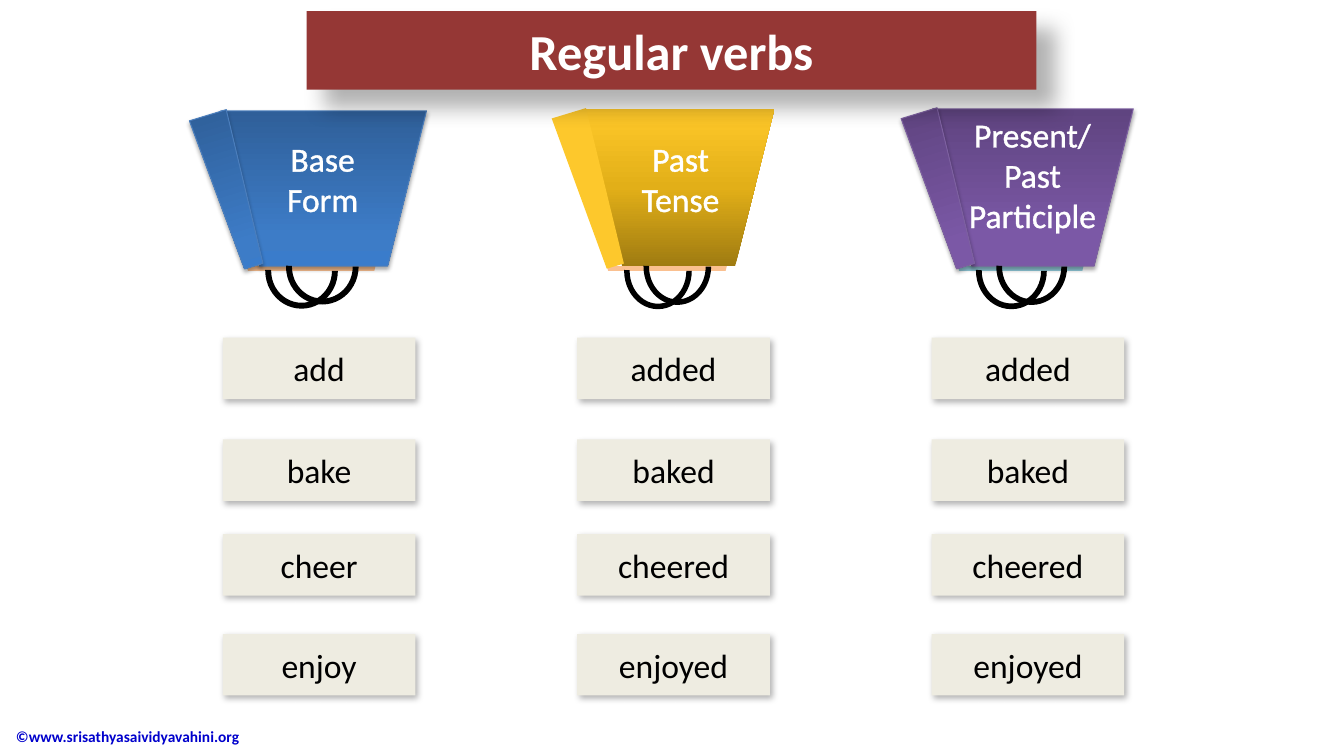
"""Build a slide that sorts regular verbs into three bags of forms."""
from lxml.etree import SubElement
from pptx import Presentation
from pptx.dml.color import RGBColor
from pptx.enum.shapes import MSO_SHAPE as Geo
from pptx.enum.text import MSO_ANCHOR as Anchor, PP_ALIGN as Align
from pptx.oxml.ns import qn
from pptx.util import Inches, Pt

WHITE = RGBColor(0xFF, 0xFF, 0xFF)
BLACK = RGBColor(0, 0, 0)
MAROON = RGBColor(0x95, 0x37, 0x35)
CREAM = RGBColor(0xEE, 0xEC, 0xE1)
LINK_BLUE = RGBColor(0, 0, 0xCC)
PEACH = RGBColor(0xFA, 0xC0, 0x90)
AQUA = RGBColor(0x93, 0xCD, 0xDD)
BLUE_EDGE = RGBColor(0x4B, 0x7E, 0xBC)
PURPLE_EDGE = RGBColor(0x7D, 0x60, 0xA0)
GOLD_SIDE = RGBColor(0xFD, 0xC8, 0x2C)
BLUES = [(0, RGBColor(0x2F, 0x5F, 0x99)), (80, RGBColor(0x3D, 0x7C, 0xC7)),
         (100, RGBColor(0x3A, 0x7C, 0xCB))]
GOLDS = [(0, RGBColor(0x9F, 0x7B, 0x11)), (50, RGBColor(0xE2, 0xAF, 0x18)),
         (100, RGBColor(0xFF, 0xC9, 0x2A))]
PURPLES = [(0, RGBColor(0x5F, 0x44, 0x80)), (80, RGBColor(0x7B, 0x58, 0xA6)),
           (100, RGBColor(0x7C, 0x57, 0xA8))]

TITLE = "Regular verbs"
CREDIT = "©www.srisathyasaividyavahini.org"
VERBS = [("add", "added", "added"), ("bake", "baked", "baked"),
         ("cheer", "cheered", "cheered"), ("enjoy", "enjoyed", "enjoyed")]
BAGS = [
    dict(label=["Base Form"], label_box=(2.53, 1.32, 1.34, 0.91), body=(2.19, 1.1, 2.04, 1.54),
         front=BLUES, side=BLUES, angle=90, edge=BLUE_EDGE, base=PEACH),
    dict(label=["Past Tense"], label_box=(6.08, 1.32, 1.34, 0.91), body=(5.78, 1.08, 1.9, 1.56),
         front=GOLDS, side=GOLD_SIDE, angle=270, edge=None, base=PEACH),
    dict(label=["Present/", "Past Participle"], label_box=(9.39, 1.08, 1.7, 1.31),
         body=(9.25, 1.08, 1.99, 1.56),
         front=PURPLES, side=PURPLES, angle=90, edge=PURPLE_EDGE, base=AQUA),
]
CARD_LEFT, CARD_STEP, CARD_WIDTH, CARD_HEIGHT = 2.21, 3.515, 1.91, 0.61
ROW_TOPS = [3.35, 4.36, 5.3, 6.29]

BAG_SHADOW = (35, 3.1, 1.8, 90)
CARD_SHADOW = (30, 4.5, 2.6, 53)
TITLE_SHADOW = (30, 15, 18, 45)


def write(shape, paragraphs, size=24, color=BLACK, bold=False, align=Align.CENTER,
          anchor=Anchor.MIDDLE, outline=False):
    """Fill a shape with formatted paragraphs."""
    frame = shape.text_frame
    frame.word_wrap = True
    frame.vertical_anchor = anchor
    for index, words in enumerate(paragraphs):
        paragraph = frame.add_paragraph() if index else frame.paragraphs[0]
        paragraph.alignment = align
        run = paragraph.add_run()
        run.text = words
        if outline:
            edge = SubElement(run._r.get_or_add_rPr(), qn("a:ln"), w=str(Pt(0.8)))
            solid = SubElement(edge, qn("a:solidFill"))
            SubElement(solid, qn("a:srgbClr"), val=str(color))
        font = run.font
        font.name, font.size, font.bold = "Calibri", Pt(size), bold
        font.color.rgb = color


def paint(shape, fill, angle=90, edge=None, shadow=None):
    """Apply a plain or graded fill, an edge and a shadow."""
    if isinstance(fill, RGBColor):
        shape.fill.solid()
        shape.fill.fore_color.rgb = fill
    else:
        shape.fill.gradient()
        shape.fill.gradient_angle = angle
        stops = next(shape._element.spPr.iter(qn("a:gsLst")))
        stops.clear()
        for position, color in fill:
            stop = SubElement(stops, qn("a:gs"), pos=str(position * 1000))
            SubElement(stop, qn("a:srgbClr"), val=str(color))
    if edge is None:
        shape.line.fill.background()
    else:
        shape.line.color.rgb = edge
        shape.line.width = Pt(0.75)
    shape.shadow.inherit = False
    if shadow:
        alpha, blur, distance, direction = shadow
        effects = shape._element.spPr.find(qn("a:effectLst"))
        outer = SubElement(effects, qn("a:outerShdw"), blurRad=str(Pt(blur)),
                           dist=str(Pt(distance)), dir=str(direction * 60000),
                           algn="ctr", rotWithShape="0")
        tint = SubElement(outer, qn("a:srgbClr"), val=str(BLACK))
        SubElement(tint, qn("a:alpha"), val=str(alpha * 1000))


def add_part(slide, geometry, box, fill, rotation=0, **style):
    """Add one painted preset shape."""
    part = slide.shapes.add_shape(geometry, *map(Inches, box))
    part.rotation = rotation
    paint(part, fill, **style)
    return part


def add_bag(slide, bag):
    """Draw an upturned bag sized by its body, with its label."""
    left, top, width, height = bag["body"]
    edge, angle = bag["edge"], bag["angle"]
    shadow = BAG_SHADOW if edge else None

    def share(x, y, w, h):
        return left + x * width, top + y * height, w * width, h * height

    add_part(slide, Geo.TRAPEZOID, share(0.126, 1, 0.626, 0.03), bag["base"], 180)
    add_part(slide, Geo.TRAPEZOID, bag["body"], bag["front"], 180,
             angle=angle, edge=edge, shadow=shadow)
    add_part(slide, Geo.TRAPEZOID, share(-0.045, 0.006, 0.187, 1.016), bag["side"], 163.1,
             angle=angle, edge=edge, shadow=shadow)
    for x, y in [(0.317, 0.76), (0.216, 0.787)]:
        handle = add_part(slide, Geo.BLOCK_ARC, share(x, y, 0.353, 0.487), BLACK, 180)
        for index, value in enumerate((108, 0.925, 0.081)):
            handle.adjustments[index] = value
    label = slide.shapes.add_textbox(*map(Inches, bag["label_box"]))
    write(label, bag["label"], color=WHITE, anchor=Anchor.TOP, outline=True)


def add_title(slide):
    """Turn the title placeholder into a rounded banner in front."""
    title = slide.shapes.title
    title.left, title.top, title.width, title.height = map(Inches, (3.04, 0.11, 7.24, 0.78))
    geometry = SubElement(title._element.spPr, qn("a:prstGeom"), prst="roundRect")
    SubElement(geometry, qn("a:avLst"))
    paint(title, MAROON, shadow=TITLE_SHADOW)
    write(title, [TITLE], size=36, color=WHITE, bold=True)
    slide.shapes._spTree.append(title._element)


def main():
    """Assemble and save the slide."""
    deck = Presentation()
    deck.slide_width, deck.slide_height = Inches(13.33), Inches(7.5)
    slide = deck.slides.add_slide(deck.slide_layouts[5])
    credit = slide.shapes.add_textbox(*map(Inches, (0.06, 7.1, 3.53, 0.41)))
    write(credit, [CREDIT], size=11, color=LINK_BLUE, bold=True, align=Align.LEFT)
    for bag in BAGS:
        add_bag(slide, bag)
    for top, forms in zip(ROW_TOPS, VERBS):
        for column, form in enumerate(forms):
            box = (CARD_LEFT + column * CARD_STEP, top, CARD_WIDTH, CARD_HEIGHT)
            write(add_part(slide, Geo.RECTANGLE, box, CREAM, shadow=CARD_SHADOW), [form])
    add_title(slide)
    deck.save("out.pptx")


if __name__ == "__main__":
    main()
